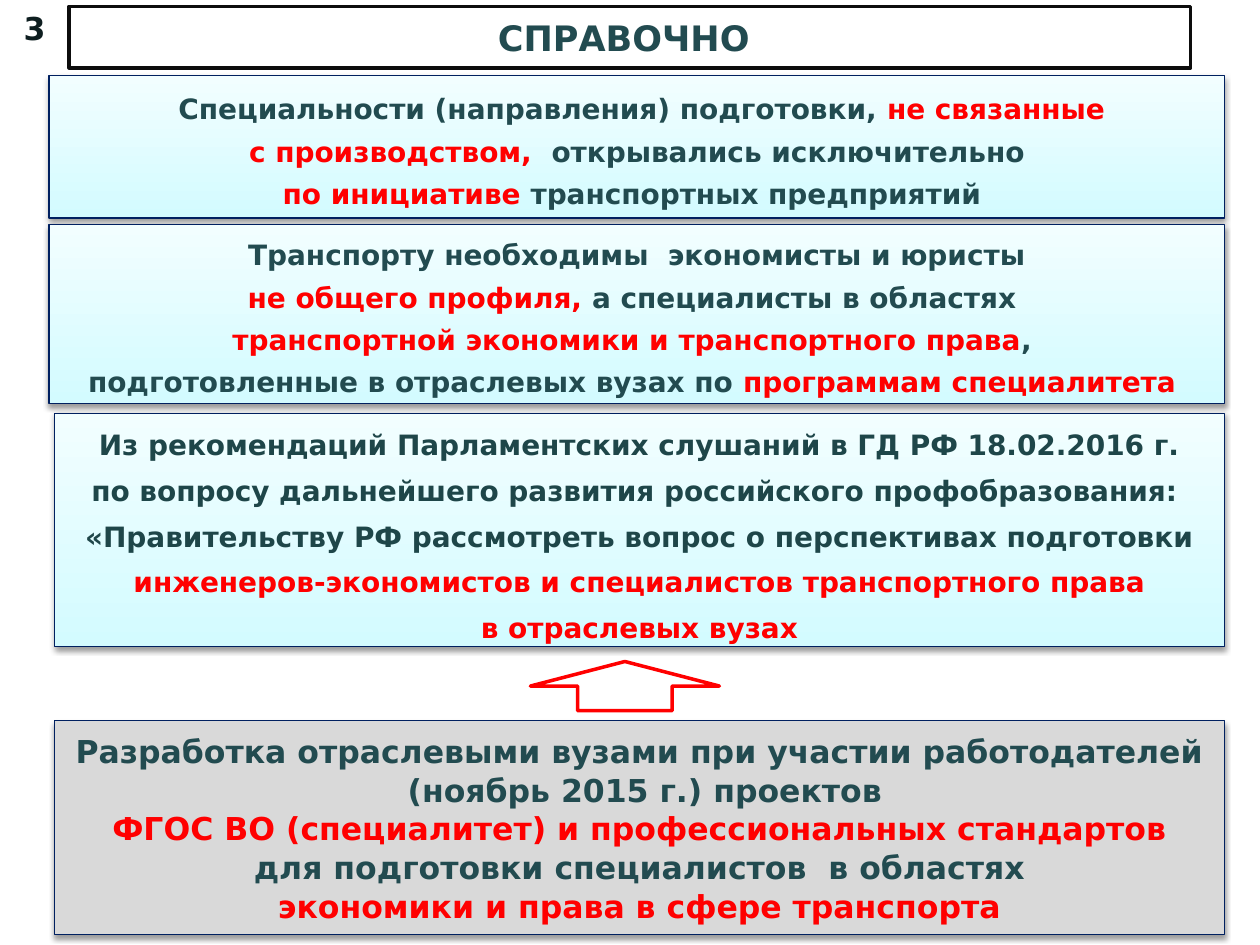
from lxml.etree import SubElement
from pptx import Presentation
from pptx.dml.color import RGBColor
from pptx.enum.shapes import MSO_SHAPE
from pptx.enum.text import MSO_ANCHOR, PP_ALIGN
from pptx.oxml.ns import qn
from pptx.util import Inches, Pt

FONT = "DejaVu Sans"
WHITE = RGBColor(0xFF, 0xFF, 0xFF)
BLACK = RGBColor(0x0D, 0x0D, 0x0D)
INK = RGBColor(0x0E, 0x1E, 0x20)
TEAL = RGBColor(0x22, 0x4B, 0x50)
DEEP = RGBColor(0x1E, 0x46, 0x49)
RED = RGBColor(0xFF, 0x00, 0x00)
NAVY = RGBColor(0x00, 0x20, 0x60)
GREY = RGBColor(0xD9, 0xD9, 0xD9)
AQUA = RGBColor(0xD3, 0xFB, 0xFF)
PALE = RGBColor(0xF2, 0xFE, 0xFF)

deck = Presentation()
deck.slide_width, deck.slide_height = Inches(10), Inches(7.5)
slide = deck.slides.add_slide(deck.slide_layouts[6])


def add_box(kind, place, line, width, fill=WHITE):
    box = slide.shapes.add_shape(kind, *[Inches(n) for n in place])
    box.shadow.inherit = False
    box.line.color.rgb = line
    box.line.width = Pt(width)
    box.fill.solid()
    box.fill.fore_color.rgb = fill
    return box


def write(shape, lines, size, color, pitch=None, wrap=False):
    """Fill a shape with centred bold lines; text between asterisks is red."""
    frame = shape.text_frame
    frame.word_wrap = wrap
    frame.vertical_anchor = MSO_ANCHOR.MIDDLE
    for i, line in enumerate(lines):
        para = frame.paragraphs[0] if i == 0 else frame.add_paragraph()
        para.alignment = PP_ALIGN.CENTER
        if pitch:
            para.line_spacing = Pt(pitch)
        for j, part in enumerate(line.split("*")):
            if part:
                run = para.add_run()
                run.text = part
                run.font.name, run.font.size = FONT, Pt(size)
                run.font.bold = True
                run.font.color.rgb = RED if j % 2 else color


# Slide number and title
number = slide.shapes.add_textbox(Inches(0.04), Inches(0.03), Inches(0.47), Inches(0.38))
write(number, ["3"], 18, INK)
title = add_box(MSO_SHAPE.RECTANGLE, (0.55, 0.05, 8.9, 0.49), BLACK, 2)
write(title, ["СПРАВОЧНО "], 20, TEAL, wrap=True)

# Panels: place, fill (None for the gradient), size, colour, line pitch, lines
panels = [
    ((0.39, 0.6, 9.33, 1.13), None, 16, TEAL, 24.2, [
        " Специальности (направления) подготовки, *не связанные*",
        "* с производством,  *открывались исключительно ",
        "*по инициативе *транспортных предприятий ",
    ]),
    ((0.39, 1.78, 9.33, 1.42), None, 16, TEAL, 24.2, [
        " Транспорту необходимы  экономисты и юристы ",
        "*не общего профиля, *а специалисты в областях ",
        "*транспортной экономики и транспортного права*, ",
        "подготовленные в отраслевых вузах по *программам специалитета *",
    ]),
    ((0.43, 3.28, 9.29, 1.85), None, 16, DEEP, 26.2, [
        " Из рекомендаций Парламентских слушаний в ГД РФ 18.02.2016 г. ",
        "по вопросу дальнейшего развития российского профобразования: ",
        "«Правительству РФ рассмотреть вопрос о перспективах подготовки",
        "* инженеров-экономистов и специалистов транспортного права *",
        "*в отраслевых вузах*",
    ]),
    ((0.43, 5.72, 9.29, 1.7), GREY, 18, TEAL, 22.2, [
        "Разработка отраслевыми вузами при участии работодателей",
        " (ноябрь 2015 г.) проектов",
        "* ФГОС ВО (специалитет) и профессиональных стандартов *",
        "для подготовки специалистов  в областях",
        "*экономики и права в сфере транспорта*",
    ]),
]
for place, fill, size, color, pitch, lines in panels:
    panel = add_box(MSO_SHAPE.RECTANGLE, place, NAVY, 0.75, fill or WHITE)
    if fill is None:
        panel.fill.gradient()
        panel.fill.gradient_angle = 90
        for stop, tint in zip(panel.fill.gradient_stops, (AQUA, PALE)):
            stop.color.rgb = tint
    # Soft shadow below the panel
    effect = panel._element.spPr.find(qn("a:effectLst"))
    shade = SubElement(effect, qn("a:outerShdw"), blurRad="40000", dist="20000",
                       dir="5400000", rotWithShape="0")
    black = SubElement(shade, qn("a:srgbClr"), val="000000")
    SubElement(black, qn("a:alpha"), val="38000")
    write(panel, lines, size, color, pitch)

# Arrow from the drafts up to the recommendations
add_box(MSO_SHAPE.UP_ARROW, (4.21, 5.25, 1.5, 0.39), RED, 2)

deck.save("out.pptx")
